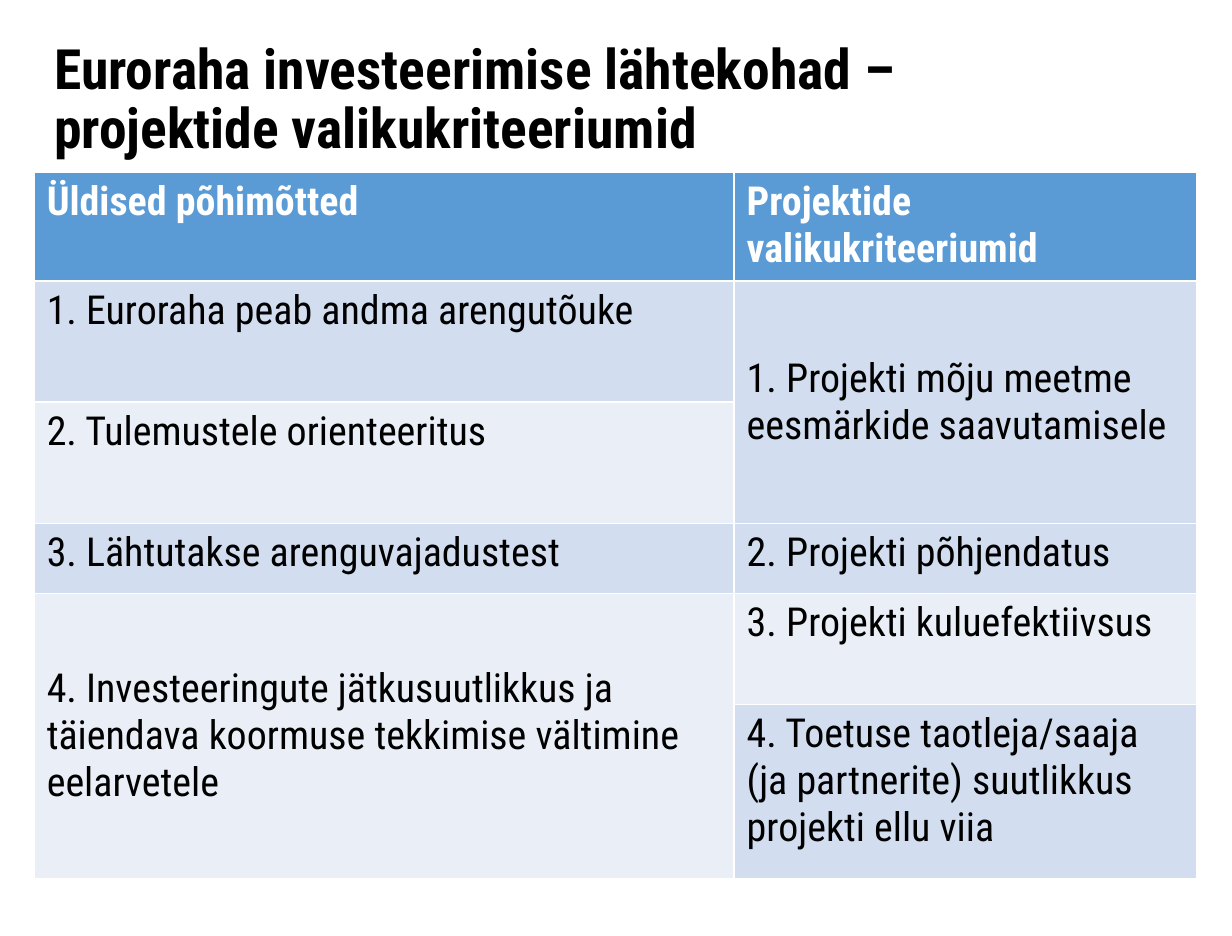
"""Build a slide that sets investment principles beside project selection criteria."""
from dataclasses import dataclass

from pptx import Presentation
from pptx.dml.color import RGBColor
from pptx.enum.text import MSO_ANCHOR
from pptx.util import Pt

TOP, MIDDLE = MSO_ANCHOR.TOP, MSO_ANCHOR.MIDDLE

HEADING = "Euroraha investeerimise lähtekohad – \vprojektide valikukriteeriumid"
PRINCIPLES = [
    ("Üldised põhimõtted", 1),
    ("1. Euroraha peab andma arengutõuke", 1),
    ("2. Tulemustele orienteeritus", 1),
    ("3. Lähtutakse arenguvajadustest", 1),
    ("4. Investeeringute jätkusuutlikkus ja täiendava koormuse tekkimise "
     "vältimine eelarvetele", 2),
]
CRITERIA = [
    ("Projektide valikukriteeriumid", 1),
    ("1. Projekti mõju meetme eesmärkide saavutamisele", 2),
    ("2. Projekti põhjendatus", 1),
    ("3. Projekti kuluefektiivsus", 1),
    ("4. Toetuse taotleja/saaja (ja partnerite) suutlikkus projekti ellu viia", 1),
]
SLIDE_SIZE = (708.75, 538.63)
COLUMN_WIDTHS = [402.7, 266.3]
ROW_HEIGHTS = [51.1, 69.8, 69.8, 40.3, 64, 100]
COMPARISON_HEIGHT = 406


@dataclass(frozen=True)
class Theme:
    """Colours, font and sizes of the slide."""
    font: str = "Roboto Condensed"
    heading_size: float = 32
    heading_spacing: float = 0.88
    cell_size: float = 23
    cell_spacing: float = 1.0
    ink: str = "000000"
    paper: str = "FFFFFF"
    header: str = "5B9BD5"
    bands: tuple = ("D2DEEF", "EAEFF7")


THEME = Theme()


def write(frame, text, size, colour, bold, spacing):
    frame.word_wrap = True
    frame.text = text
    paragraph = frame.paragraphs[0]
    paragraph.line_spacing = spacing
    for run in paragraph.runs:
        run.font.name = THEME.font
        run.font.size = Pt(size)
        run.font.bold = bold
        run.font.color.rgb = RGBColor.from_string(colour)


def add_heading(slide):
    heading = slide.shapes.add_textbox(Pt(31.2), Pt(20.2), Pt(653), Pt(61.2)).text_frame
    heading.margin_left = heading.margin_right = heading.margin_bottom = 0
    heading.margin_top = Pt(4.3)
    heading.vertical_anchor = TOP
    write(heading, HEADING, THEME.heading_size, THEME.ink, True, THEME.heading_spacing)


def add_comparison(slide):
    frame = slide.shapes.add_table(
        len(ROW_HEIGHTS), len(COLUMN_WIDTHS), Pt(19.7), Pt(99.2),
        Pt(sum(COLUMN_WIDTHS)), Pt(COMPARISON_HEIGHT))
    comparison = frame.table
    for column, width in zip(comparison.columns, COLUMN_WIDTHS):
        column.width = Pt(width)
    for row, height in enumerate(ROW_HEIGHTS):
        comparison.rows[row].height = Pt(height)
        fill_colour = THEME.bands[(row - 1) % 2] if row else THEME.header
        for cell in comparison.rows[row].cells:
            cell.fill.solid()
            cell.fill.fore_color.rgb = RGBColor.from_string(fill_colour)
    frame.height = Pt(COMPARISON_HEIGHT)
    for column, entries in enumerate((PRINCIPLES, CRITERIA)):
        row = 0
        for text, span in entries:
            cell = comparison.cell(row, column)
            if span > 1:
                cell.merge(comparison.cell(row + span - 1, column))
            cell.vertical_anchor = MIDDLE if span > 1 else TOP
            write(cell.text_frame, text, THEME.cell_size,
                  THEME.ink if row else THEME.paper, row == 0, THEME.cell_spacing)
            row += span


def main():
    deck = Presentation()
    deck.slide_width, deck.slide_height = map(Pt, SLIDE_SIZE)
    slide = deck.slides.add_slide(deck.slide_layouts[6])
    add_heading(slide)
    add_comparison(slide)
    deck.save("out.pptx")


if __name__ == "__main__":
    main()
